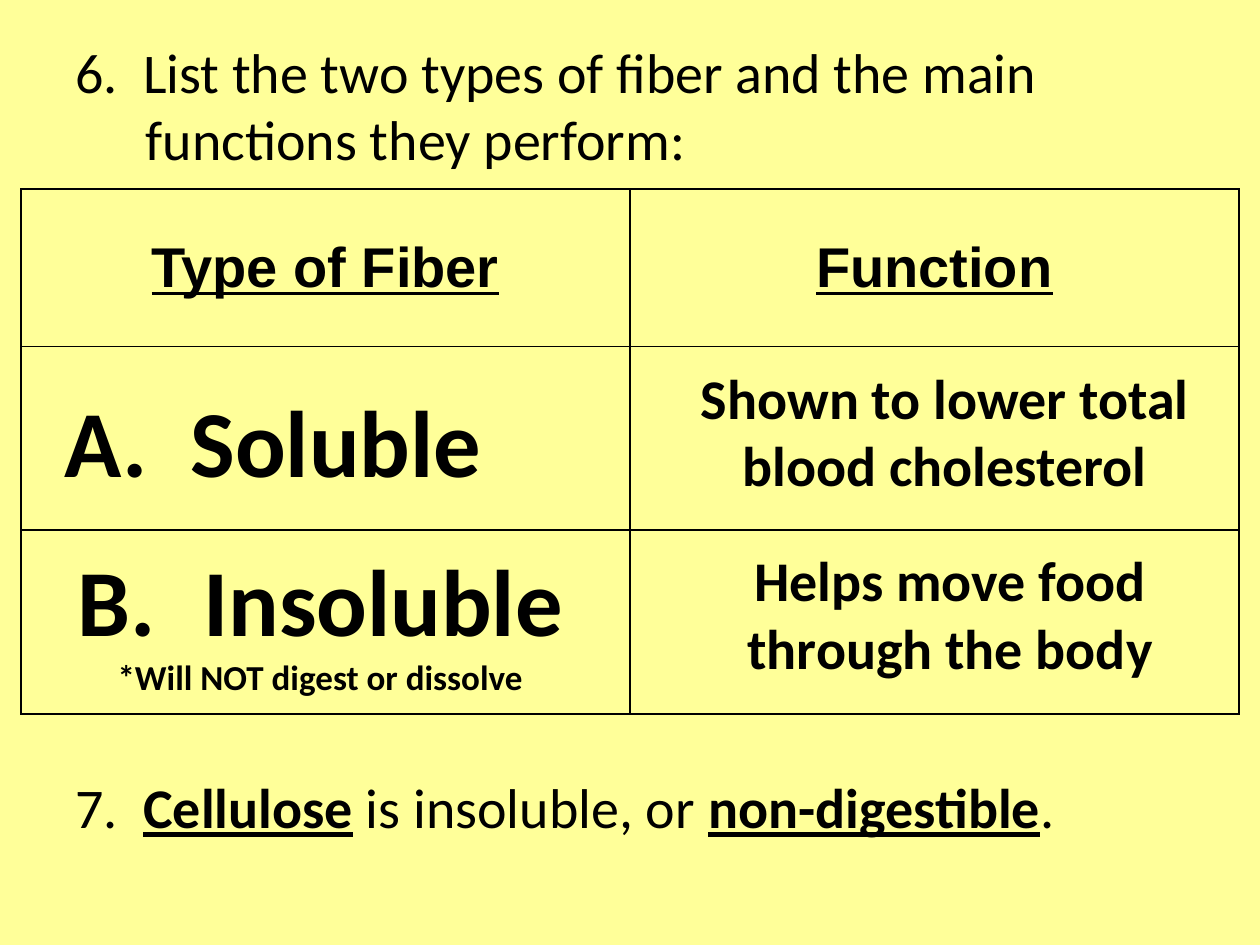
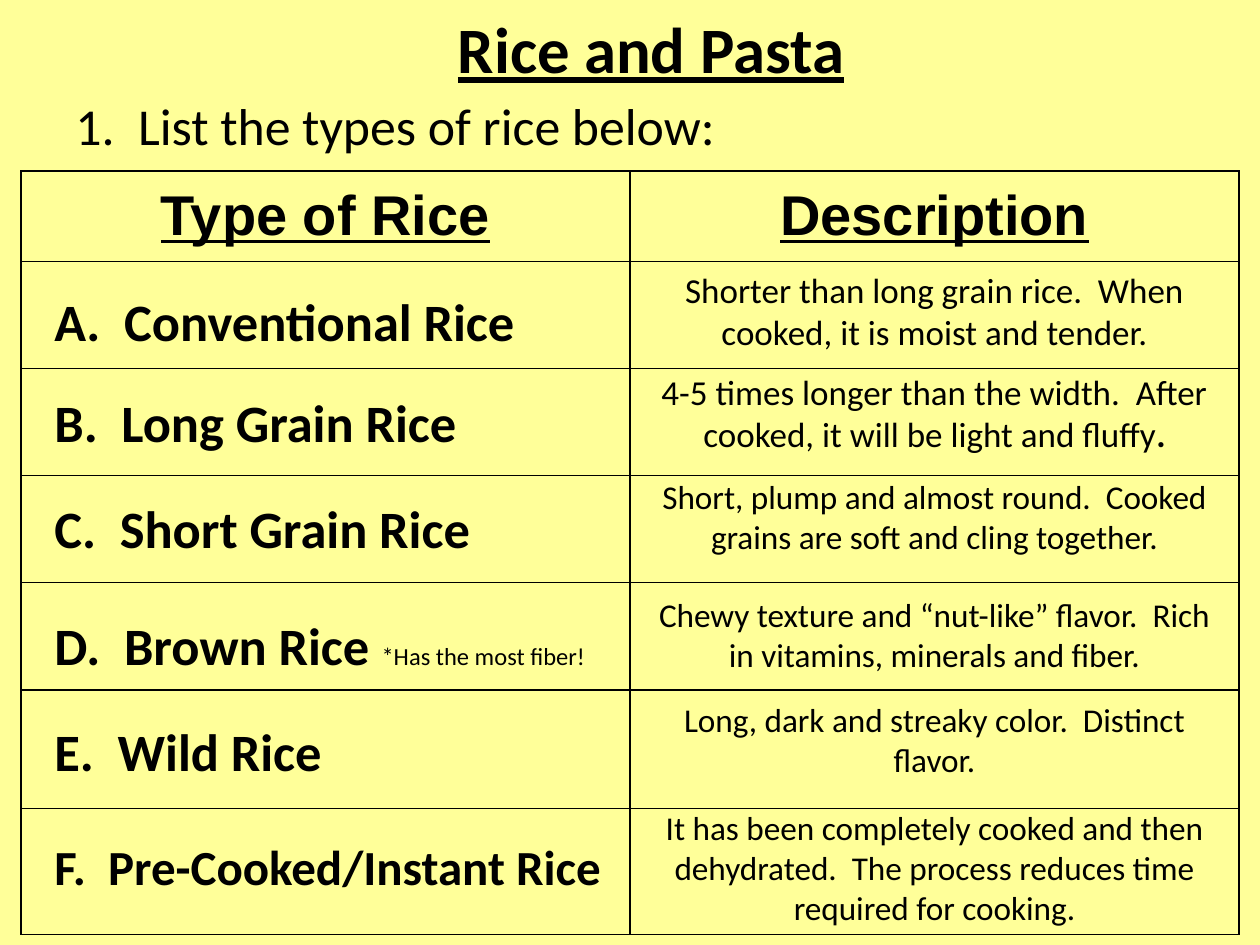
from dataclasses import dataclass

from lxml import etree
from pptx import Presentation
from pptx.dml.color import RGBColor
from pptx.enum.text import MSO_ANCHOR, MSO_AUTO_SIZE, PP_ALIGN
from pptx.oxml.ns import qn
from pptx.util import Pt

EMU_PER_PX = 7620  # 120 px to the inch
PAGE_WIDTH, PAGE_HEIGHT = 1200, 900
COLORS = {"paper": "FFFF99", "ink": "000000"}
BODY_FONT, HEADER_FONT = "Calibri", "Arial"
LEFT, CENTER = PP_ALIGN.LEFT, PP_ALIGN.CENTER
MIDDLE = MSO_ANCHOR.MIDDLE
FIT_SHAPE, FIT_NONE = MSO_AUTO_SIZE.SHAPE_TO_FIT_TEXT, MSO_AUTO_SIZE.NONE
BORDER_TAGS = ("a:lnL", "a:lnR", "a:lnT", "a:lnB")
TABLE_LEFT, COLUMN_WIDTH = 20, 580
PROMPT_INDENT, NUMBER_INDENT = 67, 120


@dataclass(frozen=True)
class Span:
    text: str
    size: float
    bold: bool = False
    underline: bool = False
    font: str = BODY_FONT


@dataclass(frozen=True)
class Line:
    spans: tuple[Span, ...]
    align: PP_ALIGN = LEFT
    hanging: int = 0
    spacing: float = 1.0
    space_before: int = 0
    letter_number: int = 0


@dataclass(frozen=True)
class TextBox:
    left: int
    top: int
    width: int
    height: int
    lines: tuple[Line, ...]
    auto_size: MSO_AUTO_SIZE = FIT_SHAPE


@dataclass(frozen=True)
class Rice:
    name: tuple[Span, ...]
    name_top: int
    description: tuple[Span, ...]
    description_top: int
    name_width: int = 540
    name_height: int = 73
    description_height: int = 89


def px(length: int) -> int:
    return length * EMU_PER_PX


def color(name: str) -> RGBColor:
    return RGBColor.from_string(COLORS[name])


def write_line(para, line: Line) -> None:
    para.alignment = line.align
    para.line_spacing = line.spacing
    para.space_before = Pt(line.space_before)
    for span in line.spans:
        run = para.add_run()
        run.text = span.text
        run.font.name = span.font
        run.font.size = Pt(span.size)
        run.font.bold = span.bold
        run.font.underline = span.underline
        run.font.color.rgb = color("ink")
    if line.hanging:
        properties = para._p.get_or_add_pPr()
        properties.set("marL", str(px(line.hanging)))
        properties.set("indent", str(-px(line.hanging)))
    if line.letter_number:
        etree.SubElement(para._p.get_or_add_pPr(), qn("a:buAutoNum"),
                         type="alphaUcPeriod", startAt=str(line.letter_number))


def add_text_box(shapes, spec_box: TextBox) -> None:
    box = shapes.add_textbox(px(spec_box.left), px(spec_box.top),
                             px(spec_box.width), px(spec_box.height))
    frame = box.text_frame
    frame.word_wrap = True
    frame.auto_size = spec_box.auto_size
    for index, line in enumerate(spec_box.lines):
        para = frame.add_paragraph() if index else frame.paragraphs[0]
        write_line(para, line)


def add_answer_row(page, *boxes: TextBox) -> None:
    """Group the answers that lie over one table row."""
    group = page.shapes.add_group_shape()
    for box in boxes:
        add_text_box(group.shapes, box)


def add_prompt(page, top: int, height: int, *spans: Span, left: int = 60,
               align: PP_ALIGN = LEFT, spacing: float = 1.0) -> None:
    """Add a question or heading with a hanging indent."""
    line = Line(spans, align, PROMPT_INDENT, spacing, space_before=2)
    add_text_box(page.shapes, TextBox(left, top, 1080, height, (line,), FIT_NONE))


def style_cell(cell) -> None:
    """Leave the cell clear, with a thin line on each side."""
    properties = cell._tc.get_or_add_tcPr()
    for tag in BORDER_TAGS:
        border = etree.SubElement(properties, qn(tag), w=str(Pt(1)))
        fill = etree.SubElement(border, qn("a:solidFill"))
        etree.SubElement(fill, qn("a:srgbClr"), val=COLORS["ink"])
    cell.fill.background()
    cell.vertical_anchor = MIDDLE


def add_answer_table(page, top: int, headers: tuple[str, str],
                     row_heights: tuple[int, ...]) -> None:
    frame = page.shapes.add_table(
        len(row_heights), len(headers), px(TABLE_LEFT), px(top),
        px(COLUMN_WIDTH * len(headers)), px(sum(row_heights)))
    table = frame.table
    table.first_row = table.horz_banding = False
    for column in table.columns:
        column.width = px(COLUMN_WIDTH)
    for row, height in zip(table.rows, row_heights):
        row.height = px(height)
        for cell in row.cells:
            style_cell(cell)
    for cell, header in zip(table.rows[0].cells, headers):
        span = Span(header, 32, bold=True, underline=True, font=HEADER_FONT)
        write_line(cell.text_frame.paragraphs[0], Line((span,), CENTER))


def add_page(deck):
    page = deck.slides.add_slide(deck.slide_layouts[6])
    page.background.fill.solid()
    page.background.fill.fore_color.rgb = color("paper")
    return page


def build_fiber_page(deck) -> None:
    page = add_page(deck)
    add_prompt(page, 30, 140, Span(
        "6.  List the two types of fiber and the main functions they perform:", 32))
    add_answer_table(page, 180, ("Type of Fiber", "Function"), (150, 175, 175))

    soluble = Line((Span("A.  Soluble", 54, bold=True),))
    lowers = Line((Span("Shown to lower total blood cholesterol", 32, bold=True),), CENTER)
    insoluble = Line((Span("Insoluble", 54, bold=True),), CENTER,
                     NUMBER_INDENT, letter_number=2)
    remark = Line((Span("*Will NOT digest or dissolve", 20, bold=True),), CENTER,
                  NUMBER_INDENT)
    moves = Line((Span("Helps move food through the body", 32, bold=True),), CENTER)
    add_answer_row(page, TextBox(50, 359, 540, 121, (soluble,)),
                   TextBox(620, 340, 560, 142, (lowers,)))
    add_answer_row(page, TextBox(40, 510, 530, 162, (insoluble, remark)),
                   TextBox(620, 514, 570, 142, (moves,)))

    add_prompt(page, 730, 100,
               Span("7.  ", 32),
               Span("Cellulose", 32, bold=True, underline=True),
               Span(" is insoluble, or ", 32),
               Span("non-digestible", 32, bold=True, underline=True),
               Span(".", 32))


RICES = (
    Rice((Span("A.  Conventional Rice", 30, bold=True),), 269,
         (Span("Shorter than long grain rice.  When cooked, it is moist and tender.", 20),),
         250, description_height=92),
    Rice((Span("B.  Long Grain Rice", 30, bold=True),), 366,
         (Span("4-5 times longer than the width.  After cooked, "
               "it will be light and fluffy", 20), Span(".", 20, bold=True)),
         347, description_height=92),
    Rice((Span("C.  Short Grain Rice", 30, bold=True),), 466,
         (Span("Short, plump and almost round.  Cooked grains are soft "
               "and cling together.", 19),), 448),
    Rice((Span("D.  Brown Rice ", 30, bold=True), Span("*Has the most fiber!", 14)), 578,
         (Span("Chewy texture and “nut-like” flavor.  Rich in vitamins, "
               "minerals and fiber.", 19),), 560),
    Rice((Span("E.  Wild Rice", 30, bold=True),), 679,
         (Span("Long, dark and streaky color.  Distinct flavor.", 19),), 660),
    Rice((Span("F.  Pre-Cooked/Instant Rice", 28, bold=True),), 791,
         (Span("It has been completely cooked and then dehydrated.  "
               "The process reduces time required for cooking.", 19),), 763,
         name_width=550, name_height=68, description_height=127),
)


def build_rice_page(deck) -> None:
    page = add_page(deck)
    add_prompt(page, 60, 100, Span("1.  List the types of rice below:", 29.6), spacing=1.4)
    add_answer_table(page, 163, ("Type of Rice", "Description"),
                     (86, 102, 102, 102, 102, 113, 120))
    add_prompt(page, -20, 110, Span("Rice and Pasta", 37, bold=True, underline=True),
               left=80, align=CENTER, spacing=1.3)
    for rice in RICES:
        add_answer_row(
            page,
            TextBox(40, rice.name_top, rice.name_width, rice.name_height,
                    (Line(rice.name),)),
            TextBox(610, rice.description_top, 560, rice.description_height,
                    (Line(rice.description, CENTER),)))


def main() -> None:
    deck = Presentation()
    deck.slide_width, deck.slide_height = px(PAGE_WIDTH), px(PAGE_HEIGHT)
    build_fiber_page(deck)
    build_rice_page(deck)
    deck.save("out.pptx")


if __name__ == "__main__":
    main()
